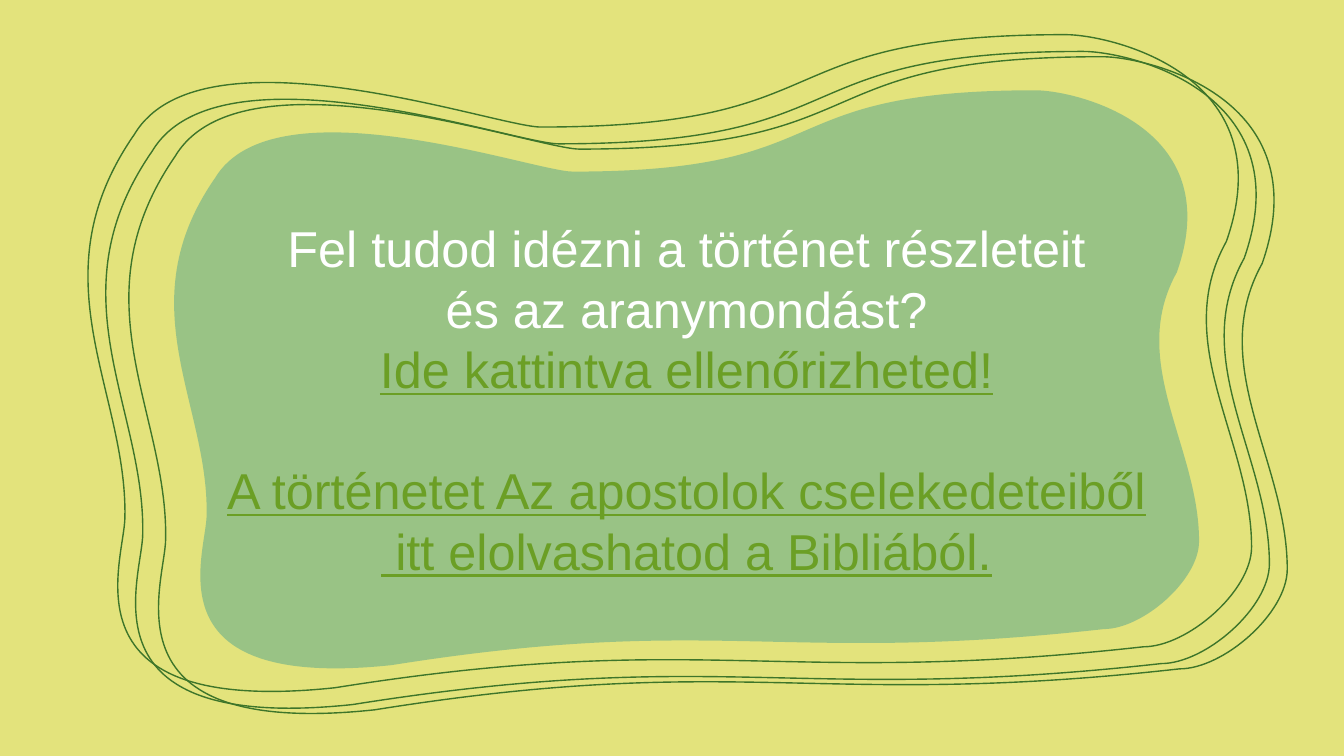
from dataclasses import dataclass

import lxml.etree
import pptx
import pptx.dml.color
import pptx.dml.fill
import pptx.enum.text
import pptx.oxml.ns
import pptx.shapes.autoshape
import pptx.slide
import pptx.util

PX = 9525  # EMU in one px, 96 px to the inch
LINE_PITCH = pptx.util.Pt(43.2)

BACKDROP = "E3E37C"
OUTLINE_GREEN = "3E752A"
BLOB_TEAL = "349893"
WHITE = "FFFFFF"
LINK_GREEN = "6B9F25"

# Wavy contour in a 1108 x 626 px frame: start, then two handles and an end per curve
CONTOUR_WIDTH, CONTOUR_HEIGHT = 1108, 626
CONTOUR_START = (44, 95)
CONTOUR_CURVES = [
    ((108, -12), (389, 88), (431, 88)),
    ((727, 88), (636, 0), (931, 0)),
    ((973, 0), (1140, 38), (1084, 197)),
    ((1030, 294), (1108, 385), (1108, 488)),
    ((1108, 530), (1047, 583), (1005, 583)),
    ((654, 622), (587, 566), (235, 622)),
    ((-29, 650), (35, 502), (35, 459)),
    ((37, 338), (-51, 232), (44, 95)),
]


@dataclass
class Wave:
    left: int
    top: int
    width: int
    height: int
    is_panel: bool = False


@dataclass
class Line:
    text: str
    colour: str = WHITE
    underline: bool = False
    gap_before: int = 0


WAVES = [
    Wave(84, 33, 1108, 626),
    Wave(123, 54, 1103, 626),
    Wave(166, 86, 976, 551, is_panel=True),
    Wave(101, 49, 1108, 626),
]

LINES = [
    Line("Fel tudod idézni a történet részleteit"),
    Line("és az aranymondást?"),
    Line("Ide kattintva ellenőrizheted!", LINK_GREEN, True),
    Line("A történetet Az apostolok cselekedeteiből", LINK_GREEN, True, LINE_PITCH),
    Line(" itt elolvashatod a Bibliából.", LINK_GREEN, True),
]


def px(length: int) -> int:
    return length * PX


def qn(tag: str) -> str:
    return pptx.oxml.ns.qn(tag)


def rgb(colour: str) -> pptx.dml.color.RGBColor:
    return pptx.dml.color.RGBColor.from_string(colour)


def apply(target: object, values: dict[str, object]) -> None:
    for name, value in values.items():
        setattr(target, name, value)


def paint(fill: pptx.dml.fill.FillFormat, colour: str) -> None:
    fill.solid()
    fill.fore_color.rgb = rgb(colour)


def draw_contour(shape: pptx.shapes.autoshape.Shape) -> None:
    """Put the smooth contour in place of the frame's straight sides."""
    path = next(shape._element.iter(qn("a:path")))
    for side in list(path):
        path.remove(side)
    steps = [("a:moveTo", (CONTOUR_START,))]
    steps += [("a:cubicBezTo", curve) for curve in CONTOUR_CURVES]
    for tag, points in steps:
        step = lxml.etree.SubElement(path, qn(tag))
        for x, y in points:
            lxml.etree.SubElement(step, qn("a:pt"), x=str(x), y=str(y))
    lxml.etree.SubElement(path, qn("a:close"))


def add_wave(slide: pptx.slide.Slide, wave: Wave) -> None:
    frame = slide.shapes.build_freeform(0, 0, scale=PX)
    frame.add_line_segments([
        (CONTOUR_WIDTH, 0), (CONTOUR_WIDTH, CONTOUR_HEIGHT), (0, CONTOUR_HEIGHT)])
    shape = frame.convert_to_shape()
    draw_contour(shape)
    apply(shape, {
        "left": px(wave.left),
        "top": px(wave.top),
        "width": px(wave.width),
        "height": px(wave.height),
    })
    shape.shadow.inherit = False
    if wave.is_panel:
        paint(shape.fill, BLOB_TEAL)
        shape.line.fill.background()
        make_translucent(shape, 42)
        write_lines(shape)
    else:
        shape.fill.background()
        paint(shape.line.fill, OUTLINE_GREEN)
        shape.line.width = pptx.util.Pt(1)


def make_translucent(shape: pptx.shapes.autoshape.Shape, percent: int) -> None:
    colour = shape._element.spPr.find(qn("a:solidFill")).find(qn("a:srgbClr"))
    lxml.etree.SubElement(colour, qn("a:alpha"), val=str(percent * 1000))


def write_lines(shape: pptx.shapes.autoshape.Shape) -> None:
    frame = shape.text_frame
    apply(frame, {
        "word_wrap": True,
        "vertical_anchor": pptx.enum.text.MSO_ANCHOR.TOP,
        "margin_left": 0,
        "margin_right": 0,
        "margin_top": px(121),
        "margin_bottom": 0,
    })
    for index, line in enumerate(LINES):
        paragraph = frame.add_paragraph() if index else frame.paragraphs[0]
        apply(paragraph, {
            "alignment": pptx.enum.text.PP_ALIGN.CENTER,
            "line_spacing": LINE_PITCH,
            "space_before": pptx.util.Emu(line.gap_before),
        })
        run = paragraph.add_run()
        run.text = line.text
        apply(run.font, {
            "name": "Arial",
            "size": pptx.util.Pt(36),
            "underline": line.underline,
        })
        run.font.color.rgb = rgb(line.colour)


def main() -> None:
    deck = pptx.Presentation()
    apply(deck, {"slide_width": px(1280), "slide_height": px(720)})
    slide = deck.slides.add_slide(deck.slide_layouts[6])
    paint(slide.background.fill, BACKDROP)

    # Wavy outlines and the panel with the question, back to front
    for wave in WAVES:
        add_wave(slide, wave)

    deck.save("out.pptx")


if __name__ == "__main__":
    main()
